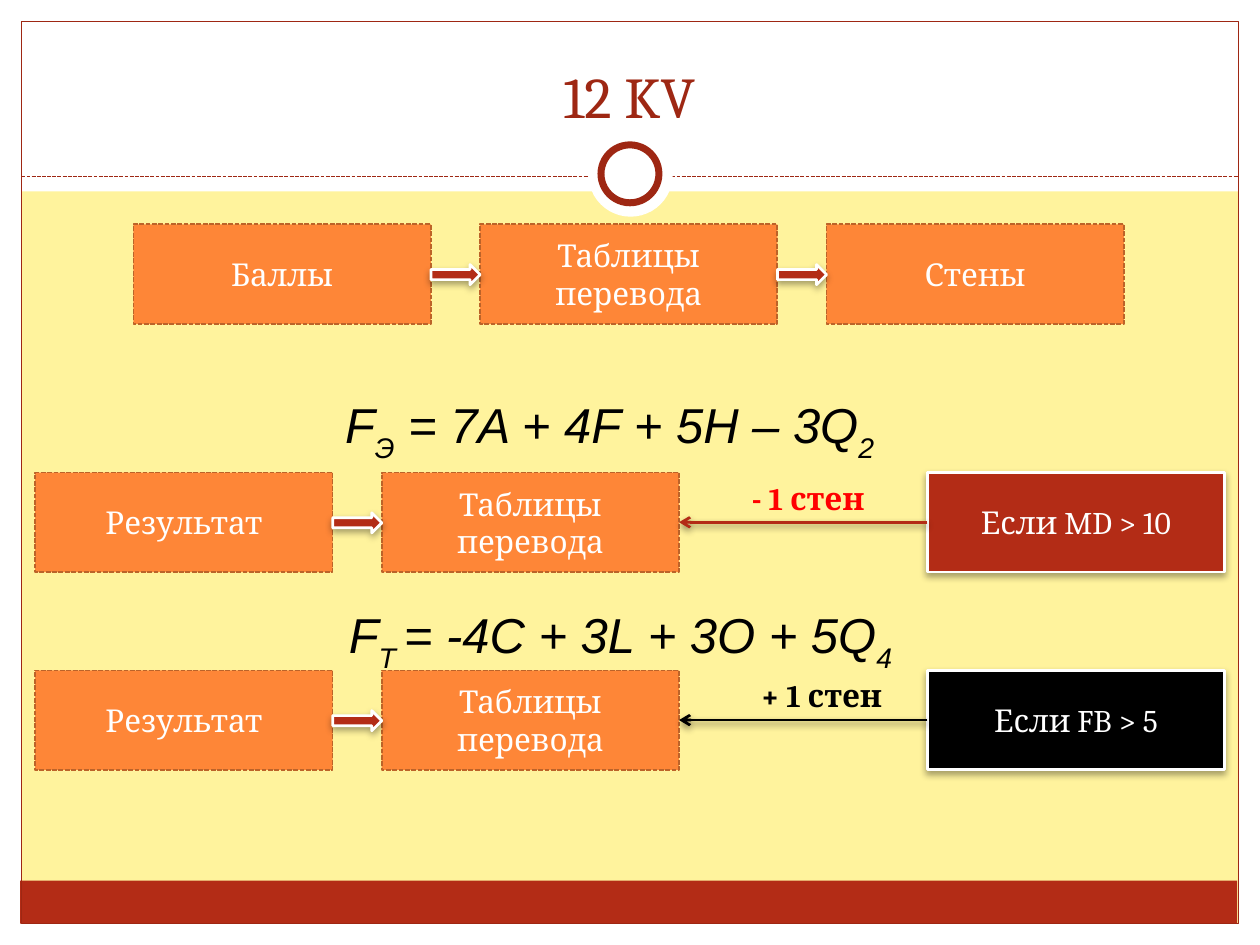
from lxml import etree
from pptx import Presentation
from pptx import util as u
from pptx.dml.color import RGBColor
from pptx.enum import dml, shapes, text
from pptx.oxml.ns import qn

PX = 9144  # 100 px to the inch
COL = {"white": "FFFFFF", "black": "000000", "cream": "FFF39D", "brick": "B32C16",
       "rust": "9E2713", "orange": "FE8637", "brown": "BC6329", "red": "FF0000"}
KIND = shapes.MSO_SHAPE
ALIGN = text.PP_ALIGN
ANCHOR = text.MSO_ANCHOR

deck = Presentation()
deck.slide_width, deck.slide_height = 1000 * PX, 750 * PX
slide = deck.slides.add_slide(deck.slide_layouts[6])
slide.background.fill.solid()
slide.background.fill.fore_color.rgb = RGBColor.from_string(COL["cream"])


def draw(kind, area, fill=None, line=None, width=0.75, dash=False):
    item = slide.shapes.add_shape(kind, *(n * PX for n in area))
    item.shadow.inherit = False
    for paint, name in ((item.fill, fill), (item.line.fill, line)):
        if name:
            paint.solid()
            paint.fore_color.rgb = RGBColor.from_string(COL[name])
        else:
            paint.background()
    if line:
        item.line.width = u.Pt(width)
    if dash:
        item.line.dash_style = dml.MSO_LINE.SQUARE_DOT
    return item


def write(item, parts, size=18, color="white", face="Cambria", align=ALIGN.CENTER,
          anchor=ANCHOR.MIDDLE, wrap=True):
    """Fill item with one paragraph; every second part is a subscript."""
    frame = item.text_frame
    frame.word_wrap = wrap
    frame.vertical_anchor = anchor
    para = frame.paragraphs[0]
    para.alignment = align
    font = para.font
    font.size, font.name = u.Pt(size), face
    font.color.rgb = RGBColor.from_string(COL[color])
    for i, part in enumerate(parts):
        run = para.add_run()
        run.text = part
        if i % 2:
            run._r.get_or_add_rPr().set("baseline", "-30000")
    return font


# Frame and title
for area in ((0, 733, 1000, 17), (0, 0, 1000, 152), (0, 0, 17, 750), (983, 0, 17, 750)):
    draw(KIND.RECTANGLE, area, "white")
draw(KIND.RECTANGLE, (16, 699, 966, 34), "brick")
draw(KIND.RECTANGLE, (17, 17, 966, 716), line="rust")
rule = slide.shapes.add_connector(shapes.MSO_CONNECTOR.STRAIGHT,
                                  17 * PX, 140 * PX, 983 * PX, 140 * PX)
rule.line.color.rgb = RGBColor.from_string(COL["rust"])
rule.line.width = u.Pt(0.75)
rule.line.dash_style = dml.MSO_LINE.SQUARE_DOT
etree.SubElement(rule._element.spPr, qn("a:effectLst"))
draw(KIND.OVAL, (467, 105, 67, 67), "white")
draw(KIND.OVAL, (477, 115, 46, 46), "white", "rust", 4)
title = slide.shapes.add_textbox(33 * PX, 25 * PX, 933 * PX, 83 * PX)
write(title, ["12 KV"], 33, "rust", anchor=ANCHOR.BOTTOM)

# Rows of boxes with block arrows in the gaps
WIDE, HIGH, GAP = 236, 79, 39
shaded = []
ends = []
rows = [(106, 178, ["Баллы", "Таблицы перевода", "Стены"]),
        (28, 375, ["Результат", "Таблицы перевода"]),
        (28, 532, ["Результат", "Таблицы перевода"])]
for left, top, words in rows:
    for i, word in enumerate(words):
        x = left + i * (WIDE + GAP)
        box = draw(KIND.RECTANGLE, (x, top, WIDE, HIGH), "orange", "brown", 0.9, True)
        write(box, [word])
        if i:
            area = (x - GAP, top + 32, GAP, 16)
            arrow = draw(KIND.RIGHT_ARROW, area, "brick", "white", 1.57)
            shaded.append((arrow, 35))
    ends.append(box)

# Conditions that correct the result
rules = [(375, "Если MD > 10", "brick", "- 1 стен", "red", 587),
         (532, "Если FB > 5", "black", "+ 1 стен", "black", 594)]
for end, (top, word, fill, note, color, x) in zip(ends[1:], rules):
    box = draw(KIND.RECTANGLE, (736, top, WIDE, HIGH), fill, "white", 1.57)
    write(box, [word])
    link = slide.shapes.add_connector(shapes.MSO_CONNECTOR.CURVE, 0, 0, 0, 0)
    link.begin_connect(box, 1)
    link.end_connect(end, 3)
    link.line.color.rgb = RGBColor.from_string(COL[fill])
    link.line.width = u.Pt(1.57)
    etree.SubElement(link._element.spPr.find(qn("a:ln")), qn("a:tailEnd"), type="arrow")
    etree.SubElement(link._element.spPr, qn("a:effectLst"))
    shaded += [(box, 35), (link, 45)]
    label = slide.shapes.add_textbox(x * PX, top * PX, 126 * PX, 40 * PX)
    font = write(label, [note], 18, color, align=ALIGN.LEFT, anchor=ANCHOR.TOP)
    font.bold = True

# Formulas
sums = [((264, 312, 472, 57), ["F", "Э", " = 7A + 4F + 5H – 3Q", "2"], ANCHOR.MIDDLE, True),
        ((267, 475, 461, 57), ["F", "Т ", "= -4C + 3L + 3O + 5Q", "4"], ANCHOR.TOP, False)]
for area, parts, anchor, wrap in sums:
    line = slide.shapes.add_textbox(*(n * PX for n in area))
    font = write(line, parts, 28, "black", "Arial", ALIGN.JUSTIFY, anchor, wrap)
    font.italic = True

# Soft shadows straight down
for item, alpha in shaded:
    effects = item._element.spPr.find(qn("a:effectLst"))
    shade = etree.SubElement(effects, qn("a:outerShdw"), blurRad=str(u.Pt(4)),
                             dist=str(u.Pt(2)), dir="5400000", rotWithShape="0")
    tone = etree.SubElement(shade, qn("a:srgbClr"), val=COL["black"])
    etree.SubElement(tone, qn("a:alpha"), val=str(alpha * 1000))

deck.save("out.pptx")
